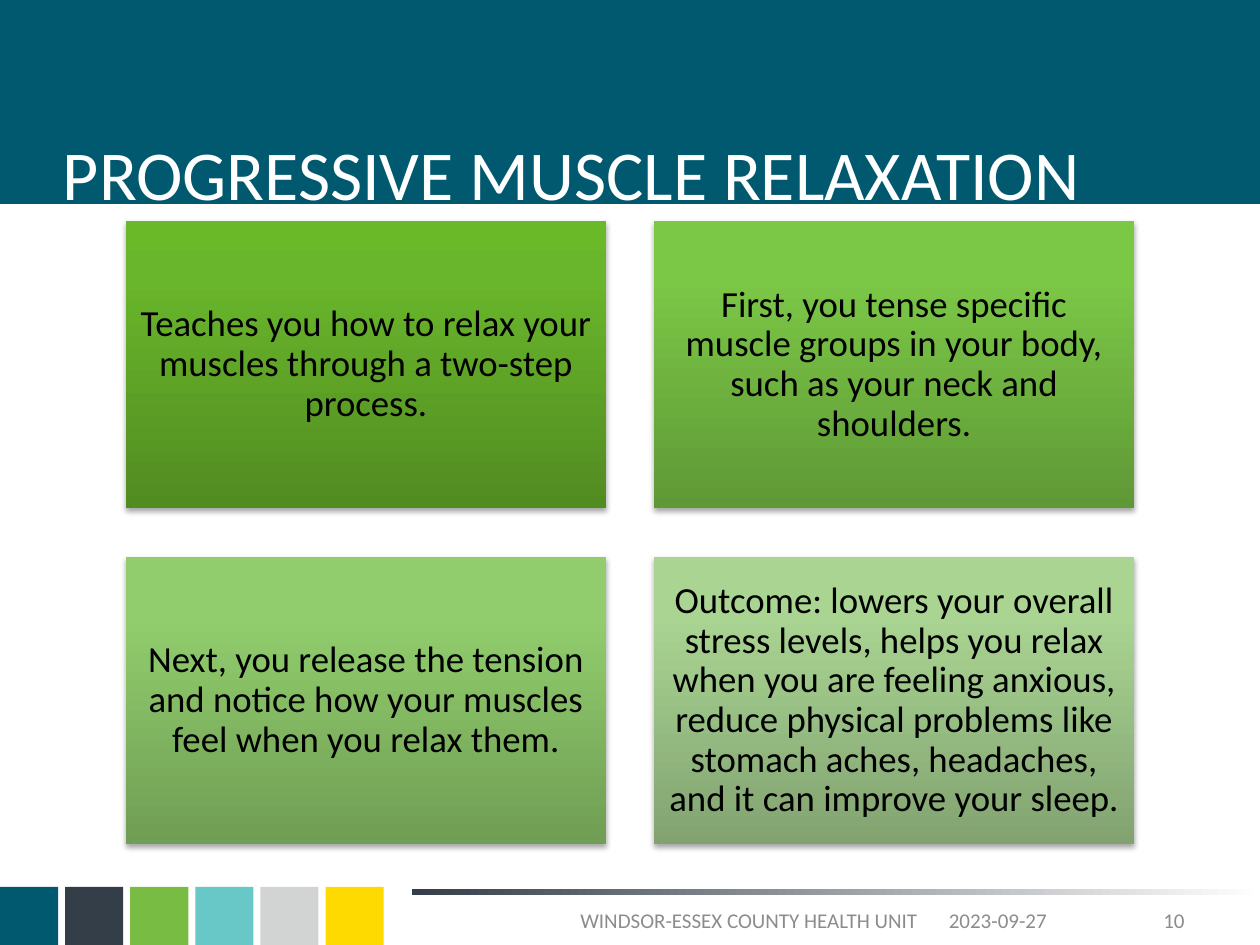
from copy import deepcopy
from lxml.etree import SubElement
from pptx import Presentation
from pptx.dml.color import RGBColor
from pptx.enum.shapes import MSO_SHAPE
from pptx.enum.text import MSO_ANCHOR, PP_ALIGN
from pptx.oxml.ns import qn
from pptx.util import Pt

TEAL = RGBColor(0x00, 0x59, 0x6F)
SLATE = RGBColor(0x33, 0x3E, 0x48)
GREEN = RGBColor(0x79, 0xBC, 0x43)
AQUA = RGBColor(0x67, 0xC8, 0xC7)
SILVER = RGBColor(0xD2, 0xD3, 0xD3)
YELLOW = RGBColor(0xFF, 0xDA, 0x00)
WHITE = RGBColor(0xFF, 0xFF, 0xFF)
BLACK = RGBColor(0x00, 0x00, 0x00)
GREY = RGBColor(0x8C, 0x8C, 0x8C)

TITLE = "PROGRESSIVE MUSCLE RELAXATION"
CARDS = [
    ("Teaches you how to relax your muscles through a two-step process.",
     ("518C21", "69B52B", "69B928")),
    ("First, you tense specific muscle groups in your body, such as your neck and shoulders.",
     ("5F9936", "7BC746", "7BCA44")),
    ("Next, you release the tension and notice how your muscles feel when you relax them.",
     ("709E54", "91CD6D", "92CF6C")),
    ("Outcome: lowers your overall stress levels, helps you relax when you are feeling anxious, "
     "reduce physical problems like stomach aches, headaches, and it can improve your sleep.",
     ("82A371", "A9D492", "A9D792")),
]
SWATCHES = [TEAL, SLATE, GREEN, AQUA, SILVER, YELLOW]
FOOTER = [
    ("WINDSOR-ESSEX COUNTY HEALTH UNIT", 235.4, 385.2, PP_ALIGN.CENTER),
    ("2023-09-27", 522, 96.5, PP_ALIGN.CENTER),
    ("10", 620.6, 63.4, PP_ALIGN.RIGHT),
]
CARD_W, CARD_H, GAP = 274.2, 164.4, 27.6
CARD_X, CARD_Y = 72, 126.2
SWATCH, STEP, SWATCH_Y = 33.2, 37.2, 506.8


def add_box(slide, x, y, w, h, color=None):
    box = slide.shapes.add_shape(MSO_SHAPE.RECTANGLE, Pt(x), Pt(y), Pt(w), Pt(h))
    box.shadow.inherit = False
    box.line.fill.background()
    if color is not None:
        box.fill.solid()
        box.fill.fore_color.rgb = color
    return box


def shade(box, stops, angle):
    box.fill.gradient()
    box.fill.gradient_angle = angle
    stop_list = next(box.element.spPr.iter(qn("a:gsLst")))
    while len(stop_list) < len(stops):
        stop_list.append(deepcopy(stop_list[-1]))
    for stop, (place, color) in zip(box.fill.gradient_stops, stops):
        stop.position = place
        stop.color.rgb = color


def add_shadow(box):
    effects = box.element.spPr.find(qn("a:effectLst"))
    outer = SubElement(effects, qn("a:outerShdw"), blurRad=str(Pt(3.1)),
                       dist=str(Pt(1.8)), dir="5400000", rotWithShape="0")
    color = SubElement(outer, qn("a:srgbClr"), val="000000")
    SubElement(color, qn("a:alpha"), val="35000")


def write(shape, text, size, color, align, anchor, inset=None):
    frame = shape.text_frame
    frame.word_wrap = True
    frame.vertical_anchor = anchor
    if inset is not None:
        frame.margin_left = frame.margin_right = Pt(inset)
        frame.margin_top = frame.margin_bottom = Pt(inset)
    para = frame.paragraphs[0]
    para.text = text
    para.alignment = align
    para.font.name = "Calibri"
    para.font.size = Pt(size)
    para.font.color.rgb = color
    return para


def add_text(slide, x, y, w, h, *style):
    write(slide.shapes.add_textbox(Pt(x), Pt(y), Pt(w), Pt(h)), *style)


def main():
    deck = Presentation()
    deck.slide_width, deck.slide_height = Pt(720), Pt(540)
    slide = deck.slides.add_slide(deck.slide_layouts[6])

    add_box(slide, 0, 0, 720, 116.6, TEAL)
    for i, color in enumerate(SWATCHES):
        add_box(slide, i * STEP, SWATCH_Y, SWATCH, SWATCH, color)
    rule = add_box(slide, 235.4, 508.2, 484.6, 3.4)
    shade(rule, [(0, SLATE), (1, WHITE)], 0)

    add_text(slide, 36, 21.6, 648, 100.8, TITLE, 40, WHITE,
             PP_ALIGN.LEFT, MSO_ANCHOR.BOTTOM, 0)
    for text, x, w, align in FOOTER:
        add_text(slide, x, 511.2, w, 28.8, text, 12, GREY, align, MSO_ANCHOR.MIDDLE)

    for i, (text, colors) in enumerate(CARDS):
        row, col = divmod(i, 2)
        card = add_box(slide, CARD_X + col * (CARD_W + GAP),
                       CARD_Y + row * (CARD_H + GAP), CARD_W, CARD_H)
        tones = [RGBColor.from_string(c) for c in colors]
        shade(card, list(zip((0, 0.8, 1), tones)), 90)
        add_shadow(card)
        para = write(card, text, 21, BLACK, PP_ALIGN.CENTER, MSO_ANCHOR.MIDDLE, 6.3)
        para.line_spacing = 0.9

    deck.save("out.pptx")


if __name__ == "__main__":
    main()
